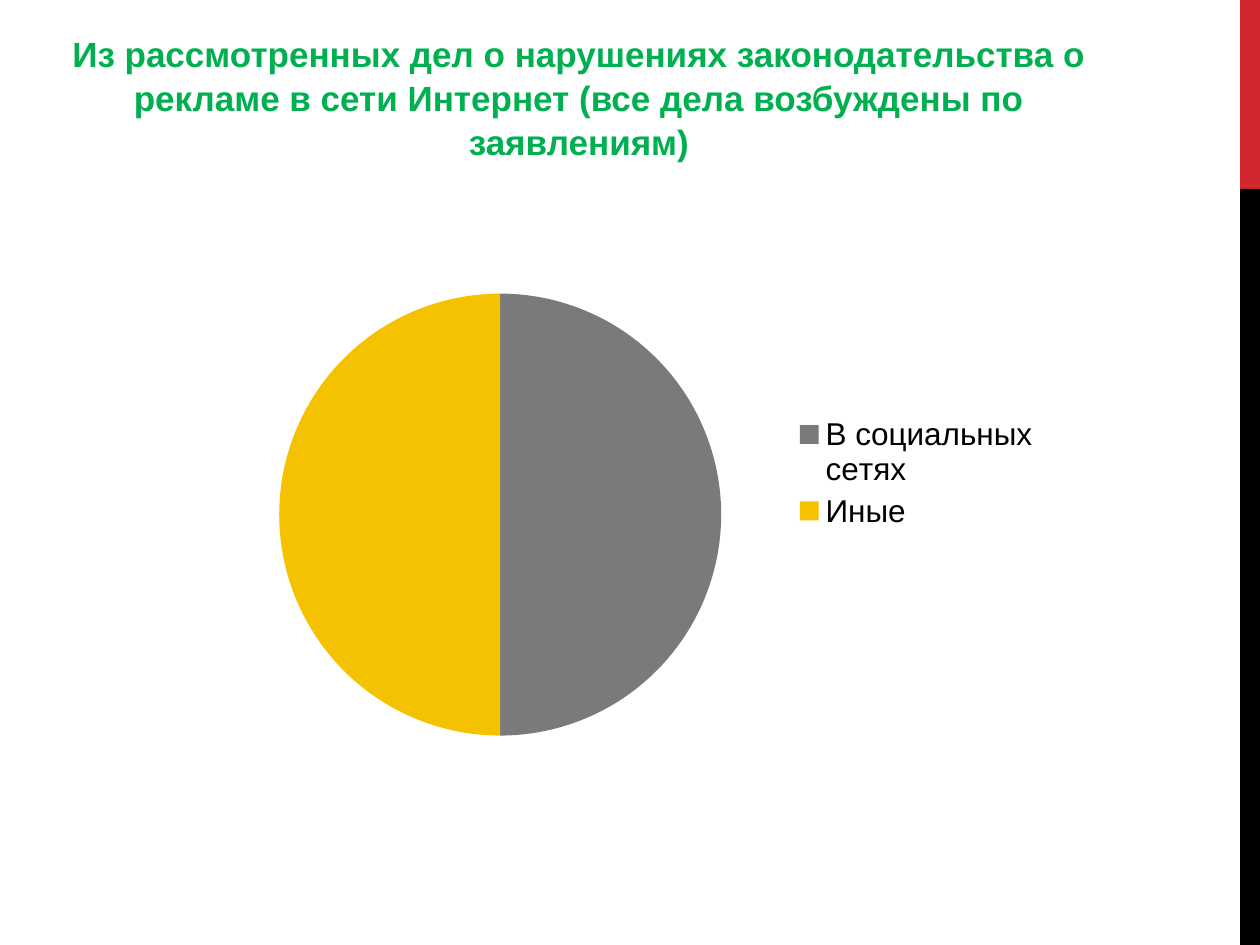
"""Build a slide with a pie chart of reviewed internet advertising cases."""
from lxml import etree
from pptx import Presentation
from pptx.chart.data import CategoryChartData
from pptx.dml.color import RGBColor
from pptx.enum.chart import XL_CHART_TYPE, XL_LEGEND_POSITION
from pptx.enum.shapes import MSO_SHAPE
from pptx.enum.text import MSO_ANCHOR, PP_ALIGN
from pptx.oxml.ns import qn
from pptx.util import Cm, Pt

PIE = XL_CHART_TYPE.PIE
RIGHT = XL_LEGEND_POSITION.RIGHT
RECTANGLE = MSO_SHAPE.RECTANGLE
MIDDLE = MSO_ANCHOR.MIDDLE
CENTER = PP_ALIGN.CENTER
TITLE_ONLY = 5

COLORS = {
    "title": "00B050",
    "text": "000000",
    "accent": "D1282E",
    "band": "000000",
    "social": "7A7A7A",
    "other": "F5C201",
}


class SlideBuilder:
    """Holds the style and the current slide."""

    font = "Arial"

    def __init__(self, slide):
        self.slide = slide

    def color(self, key):
        return RGBColor.from_string(COLORS[key])

    def style_font(self, font, size, color, bold=False):
        font.name, font.size, font.bold = self.font, Pt(size), bold
        font.color.rgb = self.color(color)

    def place(self, element, left, top, width, height):
        element.left, element.top = Cm(left), Cm(top)
        element.width, element.height = Cm(width), Cm(height)

    def title(self, text, box):
        title = self.slide.shapes.title
        self.place(title, *box)
        frame = title.text_frame
        frame.text = text
        frame.word_wrap = True
        frame.vertical_anchor = MIDDLE
        heading = frame.paragraphs[0]
        heading.alignment = CENTER
        heading.line_spacing = 1.05
        self.style_font(heading.runs[0].font, 20, "title", bold=True)

    def band(self, color, box):
        band = self.slide.shapes.add_shape(RECTANGLE, *map(Cm, box))
        band.shadow.inherit = False
        band.fill.solid()
        band.fill.fore_color.rgb = self.color(color)
        band.line.fill.background()

    def set_layout(self, part, fractions, inner=False):
        layout = part.find(qn("c:layout"))
        if layout is None:
            layout = etree.Element(qn("c:layout"))
            position = part.find(qn("c:legendPos"))
            part.insert(0 if position is None else part.index(position) + 1, layout)
        manual = etree.SubElement(layout, qn("c:manualLayout"))
        settings = {"layoutTarget": "inner"} if inner else {}
        settings.update(xMode="edge", yMode="edge")
        settings.update(zip("xywh", map(str, fractions)))
        for tag, value in settings.items():
            etree.SubElement(manual, qn(f"c:{tag}")).set("val", value)

    def pie(self, shares, colors, box, pie_area, legend_area):
        chart_data = CategoryChartData()
        chart_data.categories = list(shares)
        chart_data.add_series("Series 1", list(shares.values()))
        chart = self.slide.shapes.add_chart(PIE, *map(Cm, box), chart_data).chart
        self.style_font(chart.font, 18, "text")
        chart.has_title = False
        chart.has_legend = True
        chart.legend.position = RIGHT
        chart.legend.include_in_layout = False
        plot = chart.plots[0]
        plot.vary_by_categories = True
        for index, color in enumerate(colors):
            sector = plot.series[0].points[index].format
            sector.fill.solid()
            sector.fill.fore_color.rgb = self.color(color)
            sector.line.fill.background()
        plot_area = chart.element.find(".//" + qn("c:plotArea"))
        legend = chart.element.find(".//" + qn("c:legend"))
        self.set_layout(plot_area, pie_area, inner=True)
        self.set_layout(legend, legend_area)


def main():
    presentation = Presentation()
    presentation.slide_width, presentation.slide_height = Cm(25.4), Cm(19.05)
    layout = presentation.slide_layouts[TITLE_ONLY]
    builder = SlideBuilder(presentation.slides.add_slide(layout))
    builder.band("accent", (25, 0, 0.4, 3.81))
    builder.band("band", (25, 3.81, 0.4, 15.24))
    builder.title(
        "Из рассмотренных дел о нарушениях законодательства о рекламе "
        "в сети Интернет (все дела возбуждены по заявлениям)",
        (1.09, 0.53, 21.16, 2.84),
    )
    builder.pie(
        {"В социальных сетях": 50, "Иные": 50},
        ("social", "other"),
        box=(4.24, 3.89, 16.94, 11.28),
        pie_area=(0.08, 0.18, 0.53, 0.79),
        legend_area=(0.69, 0.39, 0.3, 0.22),
    )
    presentation.save("out.pptx")


if __name__ == "__main__":
    main()
